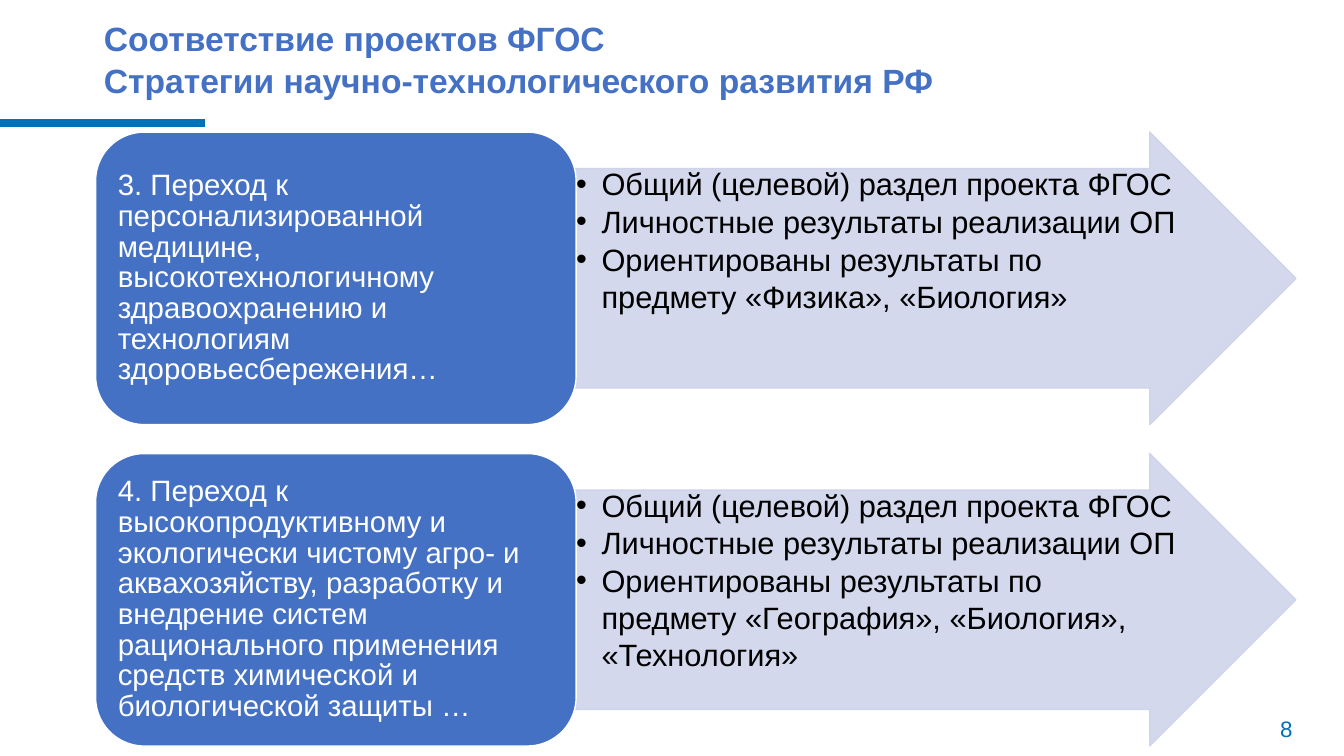
"""Build the slide that matches strategy priorities with the draft standards."""
import pptx
import pptx.dml.color
import pptx.enum.shapes
import pptx.enum.text
import pptx.oxml
import pptx.oxml.ns
import pptx.util

Cm, Pt = pptx.util.Cm, pptx.util.Pt
SHAPE = pptx.enum.shapes.MSO_SHAPE
ANCHOR = pptx.enum.text.MSO_ANCHOR
ALIGN = pptx.enum.text.PP_ALIGN
NS = pptx.oxml.ns.nsdecls("a")
BLUE, ACCENT, PALE, WHITE, BLACK = "4471C4", "0071BB", "CFD4EA", "FFFFFF", "000000"


def rgb(value):
    return pptx.dml.color.RGBColor.from_string(value)


def xml(text):
    return pptx.oxml.parse_xml(text)


class SlideBuilder:
    font = "Arial"

    def __init__(self, prs):
        self.s = prs.slides.add_slide(prs.slide_layouts[3])

    def place(self, sp, box):
        for name, value in zip(("left", "top", "width", "height"), box):
            setattr(sp, name, Cm(value))
        sp._element.getparent().append(sp._element)

    def set_text(self, sp, text, color, font, para=None, margins=(0, 0, 0, 0),
                 anchor=ANCHOR.TOP, bullet=False, gap=0):
        tf = sp.text_frame
        tf.text = text
        frame = {"word_wrap": True, "vertical_anchor": anchor,
                 "auto_size": pptx.enum.text.MSO_AUTO_SIZE.NONE}
        sides = ("margin_left", "margin_top", "margin_right", "margin_bottom")
        frame.update(zip(sides, map(Cm, margins)))
        for name, value in frame.items():
            setattr(tf, name, value)
        for i, p in enumerate(tf.paragraphs):
            if bullet:
                pPr = p._p.get_or_add_pPr()
                pPr.set("marL", str(Cm(0.66)))
                pPr.set("indent", str(-Cm(0.64)))
                pPr.append(xml(f'<a:buChar {NS} char="•"/>'))
            style = {"alignment": ALIGN.LEFT, "space_before": Pt(gap if i else 0),
                     "line_spacing": 1.0, **(para or {})}
            for name, value in style.items():
                setattr(p, name, value)
            for r in p.runs:
                for name, value in {"name": self.font, **font}.items():
                    setattr(r.font, name, value)
                r.font.color.rgb = rgb(color)

    def title(self, text, box):
        sp = self.s.shapes.title
        self.place(sp, box)
        self.set_text(sp, text, BLUE, {"size": Pt(24), "bold": True}, gap=1)

    def bullets(self, idx, items, box):
        sp = self.s.placeholders[idx]
        self.place(sp, box)
        self.set_text(sp, "\n".join(items), BLACK, {"size": Pt(22)}, bullet=True, gap=0.5)

    def shape(self, kind, box, fill, line):
        sp = self.s.shapes.add_shape(kind, *map(Cm, box))
        sp.shadow.inherit = False
        sp.fill.solid()
        sp.fill.fore_color.rgb = rgb(fill)
        sp.line.color.rgb = rgb(line)
        sp.line.width = Pt(1)
        return sp

    def arrow(self, box):
        sp = self.shape(SHAPE.RIGHT_ARROW, box, PALE, PALE)
        sp.adjustments[0] = 0.75
        fill = sp._element.spPr.find(pptx.oxml.ns.qn("a:solidFill"))
        fill[0].append(xml(f'<a:alpha {NS} val="90000"/>'))

    def card(self, text, box):
        sp = self.shape(SHAPE.ROUNDED_RECTANGLE, box, BLUE, WHITE)
        self.set_text(sp, text, WHITE, {"size": Pt(21)}, {"line_spacing": Pt(21.9)},
                      margins=(0.2, 0, 0.7, 0), anchor=ANCHOR.MIDDLE)

    def rule(self, x1, x2, y):
        kind = pptx.enum.shapes.MSO_CONNECTOR.STRAIGHT
        sp = self.s.shapes.add_connector(kind, *map(Cm, (x1, y, x2, y)))
        sp.line.color.rgb = rgb(ACCENT)
        sp.line.width = Pt(6)
        sp._element.spPr.append(xml(f"<a:effectLst {NS}/>"))

    def number(self, text, box):
        sp = self.s.shapes.add_textbox(*map(Cm, box))
        self.set_text(sp, text, ACCENT, {"size": Pt(16)}, margins=(0.1, 0, 0, 0))


COMMON = ["Общий (целевой) раздел проекта ФГОС", "Личностные результаты реализации ОП"]
PRIORITIES = [
    ("3. Переход к персонализированной медицине, высокотехнологичному "
     "здравоохранению и технологиям здоровьесбережения…",
     "Ориентированы результаты по\vпредмету «Физика», «Биология»"),
    ("4. Переход к высокопродуктивному и экологически чистому агро- и "
     "аквахозяйству, разработку и внедрение систем рационального применения "
     "средств химической и биологической защиты …",
     "Ориентированы результаты по\vпредмету «География», «Биология», «Технология»"),
]


def main():
    prs = pptx.Presentation()
    prs.slide_width, prs.slide_height = Cm(33.87), Cm(19.05)
    b = SlideBuilder(prs)
    b.rule(0, 5.16, 3.1)
    for i, (priority, subjects) in enumerate(PRIORITIES):
        top = 3.33 + 8.1 * i
        b.arrow((14.5, top, 18.16, 7.37))
        b.bullets(i + 1, COMMON + [subjects], (14.5, top + 0.83, 15.6, 4.5))
        b.card(priority, (2.41, top, 12.11, 7.37))
    b.title("Соответствие проектов ФГОС\nСтратегии научно-технологического развития РФ",
            (2.62, 0.46, 21.2, 2.11))
    b.number("8", (32.16, 18.03, 0.86, 0.71))
    prs.save("out.pptx")


if __name__ == "__main__":
    main()
